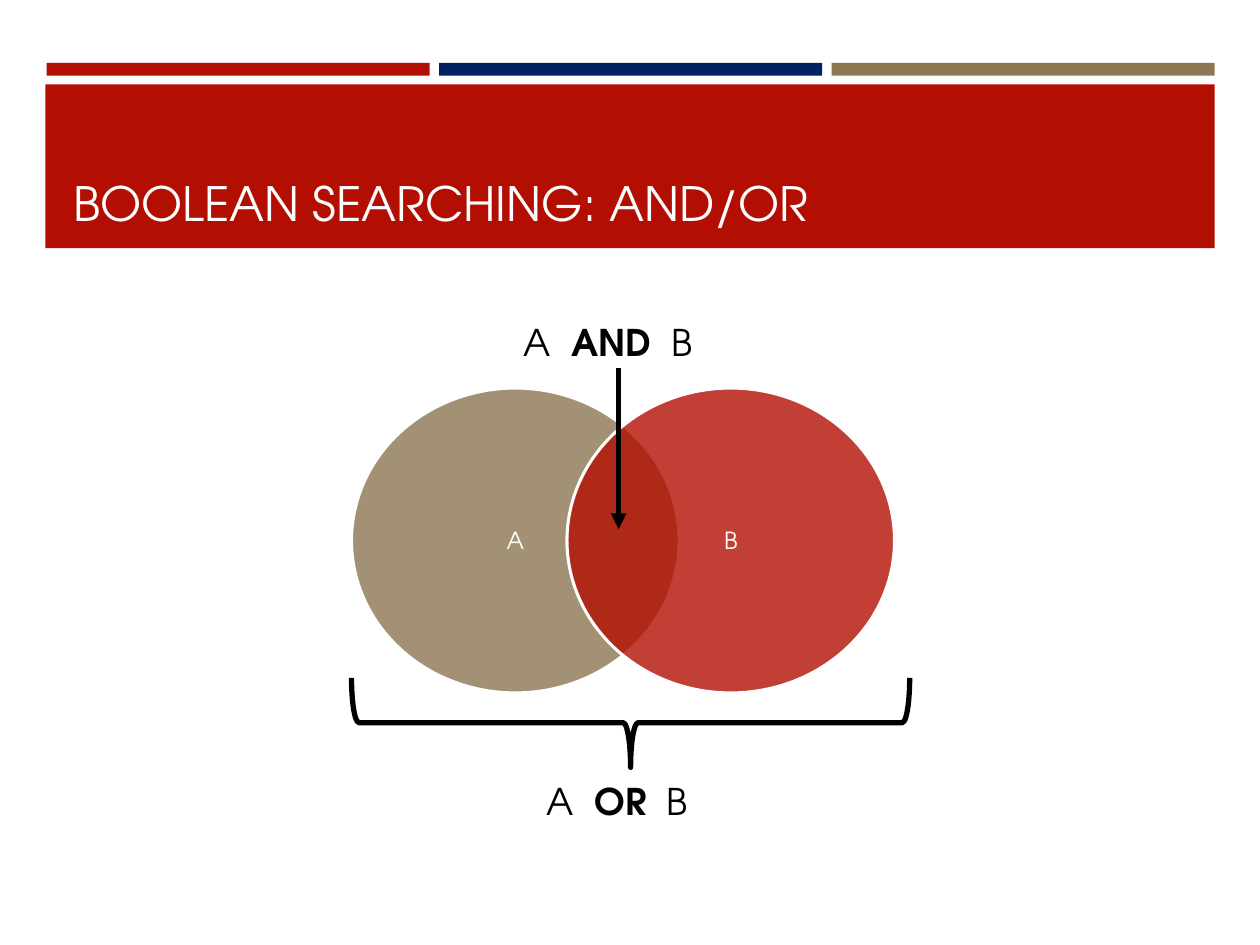
"""Build a slide explaining Boolean AND/OR searching with a Venn diagram."""
import pptx
import pptx.util
import pptx.dml.color
import pptx.enum.shapes
import pptx.enum.text
import pptx.oxml
import pptx.oxml.ns

Inches = pptx.util.Inches
Pt = pptx.util.Pt
MSO_SHAPE = pptx.enum.shapes.MSO_SHAPE
ANCHOR = pptx.enum.text.MSO_ANCHOR
ALIGN = pptx.enum.text.PP_ALIGN
FONT = "TeX Gyre Adventor"
COLORS = {"red": "B20F02", "navy": "002060", "tan": "8D7654",
          "white": "FFFFFF", "black": "000000"}


def rgb(name):
    return pptx.dml.color.RGBColor.from_string(COLORS[name])


def set_font(p, size, color):
    p.font.name = FONT
    p.font.size = Pt(size)
    p.font.color.rgb = rgb(color)


def add_xml(parent, tag, attrs=""):
    ns = pptx.oxml.ns.nsdecls("a")
    parent.append(pptx.oxml.parse_xml(f"<a:{tag} {ns} {attrs}/>"))


def add_shape(s, kind, box, fill=None, line=None, width=1):
    sp = s.shapes.add_shape(kind, *map(Inches, box))
    sp.shadow.inherit = False
    if fill:
        sp.fill.solid()
        sp.fill.fore_color.rgb = rgb(fill)
    else:
        sp.fill.background()
    if line:
        sp.line.color.rgb = rgb(line)
        sp.line.width = Pt(width)
    else:
        sp.line.fill.background()
    return sp


def add_title(s, text):
    sp = s.shapes.title
    sp.left, sp.top, sp.width, sp.height = map(Inches, (0.48, 0.77, 9.05, 1.11))
    tf = sp.text_frame
    tf.text = text
    tf.vertical_anchor = ANCHOR.BOTTOM
    p = tf.paragraphs[0]
    p.alignment = ALIGN.LEFT
    set_font(p, 27, "white")
    s.shapes._spTree.append(sp._element)


def add_circle(s, left, label, fill):
    sp = add_shape(s, MSO_SHAPE.OVAL, (left, 3.08, 2.6, 2.42), fill, "white", 1.75)
    color = sp._element.spPr.find(".//" + pptx.oxml.ns.qn("a:srgbClr"))
    add_xml(color, "alpha", 'val="80000"')
    tf = sp.text_frame
    tf.text = label
    tf.vertical_anchor = ANCHOR.MIDDLE
    p = tf.paragraphs[0]
    p.alignment = ALIGN.CENTER
    set_font(p, 13.5, "white")


def add_expression(s, box, operator):
    tf = s.shapes.add_textbox(*map(Inches, box)).text_frame
    tf.word_wrap = False
    tf.auto_size = pptx.enum.text.MSO_AUTO_SIZE.SHAPE_TO_FIT_TEXT
    p = tf.paragraphs[0]
    set_font(p, 21, "black")
    for text, bold in (("A  ", False), (operator, True), ("  B", False)):
        r = p.add_run()
        r.text = text
        r.font.bold = bold


def add_arrow(s, x, top, bottom):
    line = s.shapes.add_connector(pptx.enum.shapes.MSO_CONNECTOR.STRAIGHT,
                                  *map(Inches, (x, top, x, bottom)))
    line.line.color.rgb = rgb("black")
    line.line.width = Pt(3)
    add_xml(line.line._get_or_add_ln(), "tailEnd", 'type="triangle"')
    add_xml(line._element.spPr, "effectLst")


def main():
    prs = pptx.Presentation()
    prs.slide_width, prs.slide_height = Inches(10), Inches(7.5)
    s = prs.slides.add_slide(prs.slide_layouts[5])

    for i, color in enumerate(("red", "navy", "tan")):
        add_shape(s, MSO_SHAPE.RECTANGLE, (0.37 + 3.115 * i, 0.5, 3.04, 0.1), color)
    add_shape(s, MSO_SHAPE.RECTANGLE, (0.36, 0.67, 9.28, 1.3), "red")
    add_title(s, "BOOLEAN SEARCHING: AND/OR")

    add_circle(s, 2.79, "A", "tan")
    add_circle(s, 4.5, "B", "red")
    add_expression(s, (4.06, 2.49, 1.56, 0.45), "AND")
    brace = add_shape(s, MSO_SHAPE.LEFT_BRACE, (4.65, 3.52, 0.71, 4.43),
                      line="black", width=3)
    brace.rotation = 270
    add_expression(s, (4.24, 6.13, 1.33, 0.45), "OR")
    add_arrow(s, 4.91, 2.92, 4.2)
    prs.save("out.pptx")


if __name__ == "__main__":
    main()
